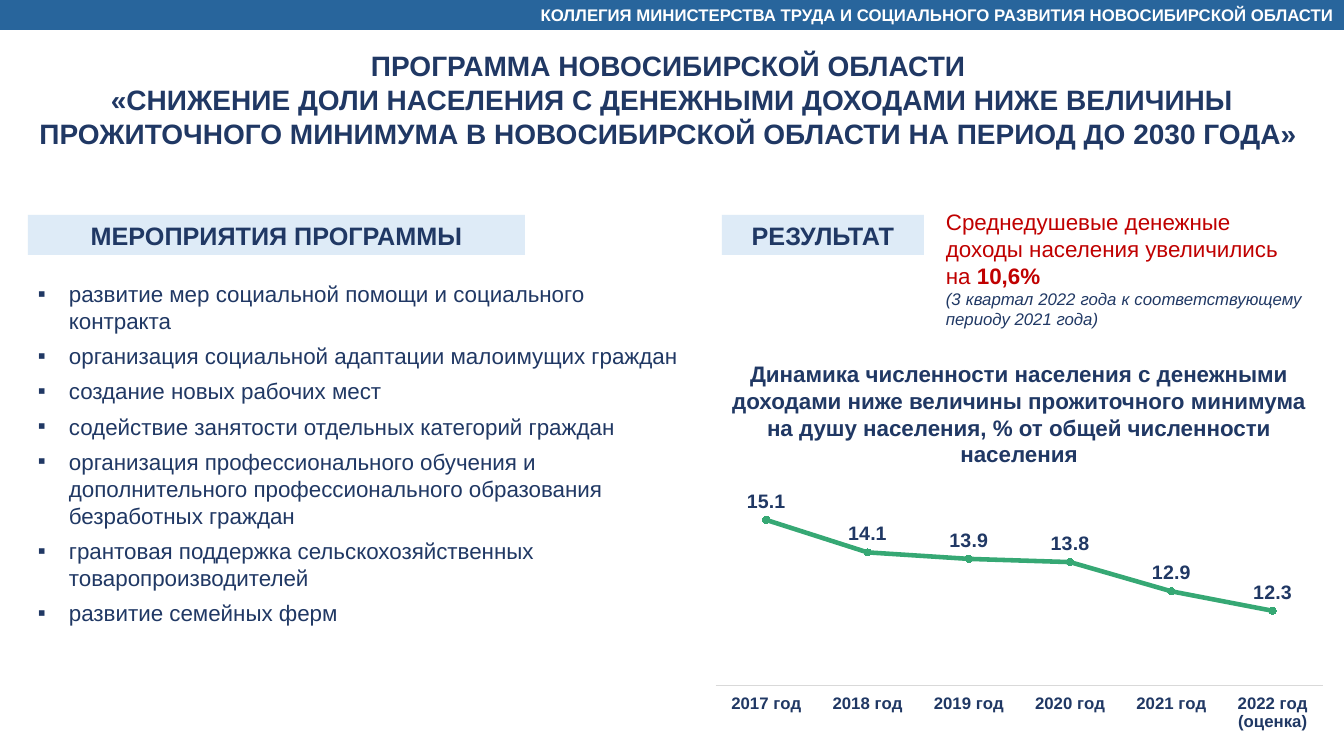
from dataclasses import dataclass, field
from typing import Any

from lxml.etree import SubElement
from pptx import Presentation
from pptx.chart.data import CategoryChartData
from pptx.dml.color import RGBColor
from pptx.enum.chart import (XL_CHART_TYPE, XL_LABEL_POSITION, XL_MARKER_STYLE,
                             XL_TICK_LABEL_POSITION, XL_TICK_MARK)
from pptx.enum.shapes import MSO_SHAPE
from pptx.enum.text import MSO_ANCHOR, MSO_AUTO_SIZE, PP_ALIGN
from pptx.oxml import parse_xml
from pptx.oxml.ns import nsdecls, qn
from pptx.util import Emu, Pt

EMU_PER_PX = 914400 / 100.8


@dataclass(frozen=True)
class Theme:
    font: str = "Arial"
    navy: str = "203864"
    red: str = "C00000"
    white: str = "FFFFFF"
    banner: str = "28659C"
    panel: str = "DEEBF7"
    trend: str = "36A874"
    axis: str = "D9D9D9"
    title: int = 20
    heading: int = 18
    body: int = 16
    value: int = 14
    small: int = 12


THEME = Theme()


@dataclass(frozen=True)
class Span:
    text: str
    size: int = THEME.body
    color: str = THEME.navy
    bold: bool = False
    italic: bool = False


@dataclass(frozen=True)
class Line:
    spans: list[Span]
    align: Any = PP_ALIGN.LEFT
    bulleted: bool = False


@dataclass(frozen=True)
class Block:
    box: tuple[int, int, int, int]
    lines: list[Line] = field(default_factory=list)
    fill: str | None = None


def px(length: int) -> Emu:
    return Emu(round(length * EMU_PER_PX))


def apply_format(target: Any, values: dict[str, Any]) -> None:
    for name, value in values.items():
        setattr(target, name, value)


def style_font(font: Any, size: int, color: str, bold: bool = False,
               italic: bool = False) -> None:
    apply_format(font, {"name": THEME.font, "size": Pt(size),
                        "bold": bold, "italic": italic})
    font.color.rgb = RGBColor.from_string(color)


def add_bullet(paragraph: Any) -> None:
    properties = paragraph._p.get_or_add_pPr()
    indent = px(31)
    properties.set("marL", str(indent))
    properties.set("indent", str(-indent))
    SubElement(properties, qn("a:buFont")).set("typeface", THEME.font)
    SubElement(properties, qn("a:buChar")).set("char", "▪")
    paragraph.space_after = Pt(6)


def draw_block(slide: Any, block: Block) -> None:
    box = [px(length) for length in block.box]
    if block.fill:
        shape = slide.shapes.add_shape(MSO_SHAPE.RECTANGLE, *box)
        shape.shadow.inherit = False
        shape.fill.solid()
        shape.fill.fore_color.rgb = RGBColor.from_string(block.fill)
        shape.line.fill.background()
    else:
        shape = slide.shapes.add_textbox(*box)
    frame = shape.text_frame
    apply_format(frame, {"word_wrap": True, "vertical_anchor": MSO_ANCHOR.TOP,
                         "auto_size": MSO_AUTO_SIZE.SHAPE_TO_FIT_TEXT})
    for index, line in enumerate(block.lines):
        paragraph = frame.add_paragraph() if index else frame.paragraphs[0]
        paragraph.alignment = line.align
        if line.bulleted:
            add_bullet(paragraph)
        for span in line.spans:
            run = paragraph.add_run()
            run.text = span.text
            style_font(run.font, span.size, span.color, span.bold, span.italic)


def place_plot(chart: Any, x: float, y: float, w: float, h: float) -> None:
    """Fix the inner plot area as fractions of the chart."""
    plot_area = chart._chartSpace.chart.plotArea
    for old in plot_area.findall(qn("c:layout")):
        plot_area.remove(old)
    fractions = "".join(f'<c:{tag} val="{value}"/>' for tag, value in
                        {"x": x, "y": y, "w": w, "h": h}.items())
    plot_area.insert(0, parse_xml(
        f'<c:layout {nsdecls("c")}><c:manualLayout><c:layoutTarget val="inner"/>'
        f'<c:xMode val="edge"/><c:yMode val="edge"/>{fractions}'
        '</c:manualLayout></c:layout>'))


def draw_poverty_chart(slide: Any, box: tuple[int, int, int, int],
                       shares: dict[str, float]) -> None:
    data = CategoryChartData(number_format="0.0")
    data.categories = list(shares)
    data.add_series("Доля населения, %", list(shares.values()))
    chart = slide.shapes.add_chart(XL_CHART_TYPE.LINE_MARKERS,
                                   *map(px, box), data).chart
    apply_format(chart, {"has_legend": False, "has_title": False})
    style_font(chart.font, THEME.small, THEME.navy, bold=True)
    place_plot(chart, 0.02, 0.02, 0.96, 0.8)

    apply_format(chart.value_axis, {
        "minimum_scale": 10, "maximum_scale": 16, "visible": False,
        "has_major_gridlines": False})
    years = chart.category_axis
    apply_format(years, {
        "major_tick_mark": XL_TICK_MARK.NONE, "minor_tick_mark": XL_TICK_MARK.NONE,
        "tick_label_position": XL_TICK_LABEL_POSITION.LOW})
    years.format.line.color.rgb = RGBColor.from_string(THEME.axis)
    years.format.line.width = Pt(0.75)
    style_font(years.tick_labels.font, THEME.small, THEME.navy, bold=True)

    plot = chart.plots[0]
    plot.vary_by_categories = False
    trend = plot.series[0]
    trend.smooth = False
    trend.format.line.color.rgb = RGBColor.from_string(THEME.trend)
    trend.format.line.width = Pt(3.25)
    apply_format(trend.marker, {"style": XL_MARKER_STYLE.CIRCLE, "size": 5})
    trend.marker.format.fill.solid()
    trend.marker.format.fill.fore_color.rgb = RGBColor.from_string(THEME.trend)
    trend.marker.format.line.fill.background()
    labels = trend.data_labels
    apply_format(labels, {
        "show_value": True, "position": XL_LABEL_POSITION.ABOVE,
        "number_format": "0.0", "number_format_is_linked": False})
    style_font(labels.font, THEME.value, THEME.navy, bold=True)


def bold_line(text: str, size: int, color: str = THEME.navy,
              align: Any = PP_ALIGN.CENTER) -> Line:
    return Line([Span(text, size, color, bold=True)], align)


MEASURES = [
    "развитие мер социальной помощи и социального контракта",
    "организация социальной адаптации малоимущих граждан",
    "создание новых рабочих мест",
    "содействие занятости отдельных категорий граждан",
    "организация профессионального обучения и дополнительного профессионального образования безработных граждан",
    "грантовая поддержка сельскохозяйственных товаропроизводителей",
    "развитие семейных ферм",
]
BLOCKS = [
    Block((0, 44, 1344, 112), [
        bold_line("ПРОГРАММА НОВОСИБИРСКОЙ ОБЛАСТИ ", THEME.title),
        bold_line("«СНИЖЕНИЕ ДОЛИ НАСЕЛЕНИЯ С ДЕНЕЖНЫМИ ДОХОДАМИ НИЖЕ ВЕЛИЧИНЫ ПРОЖИТОЧНОГО МИНИМУМА В НОВОСИБИРСКОЙ ОБЛАСТИ НА ПЕРИОД ДО 2030 ГОДА» ", THEME.title)]),
    Block((714, 355, 610, 119), [bold_line(
        "Динамика численности населения с денежными доходами ниже величины прожиточного минимума на душу населения, % от общей численности населения", THEME.body)]),
    Block((28, 215, 497, 40), [bold_line("МЕРОПРИЯТИЯ ПРОГРАММЫ", THEME.heading)], THEME.panel),
    Block((936, 203, 376, 132), [
        Line([Span("Среднедушевые денежные доходы населения увеличились на ", color=THEME.red),
              Span("10,6%", color=THEME.red, bold=True)]),
        Line([Span("(3 квартал 2022 года к соответствующему периоду 2021 года)",
                   THEME.small, italic=True)], PP_ALIGN.JUSTIFY)]),
    Block((722, 215, 202, 40), [bold_line("РЕЗУЛЬТАТ", THEME.heading)], THEME.panel),
    Block((0, 0, 1344, 30), [bold_line(
        "КОЛЛЕГИЯ МИНИСТЕРСТВА ТРУДА И СОЦИАЛЬНОГО РАЗВИТИЯ НОВОСИБИРСКОЙ ОБЛАСТИ",
        THEME.small, THEME.white, PP_ALIGN.RIGHT)], THEME.banner),
    Block((28, 275, 662, 387), [Line([Span(text)], bulleted=True) for text in MEASURES]),
]
POVERTY_SHARES = {"2017 год": 15.1, "2018 год": 14.1, "2019 год": 13.9,
                  "2020 год": 13.8, "2021 год": 12.9, "2022 год (оценка)": 12.3}


def main() -> None:
    deck = Presentation()
    apply_format(deck, {"slide_width": px(1344), "slide_height": px(756)})
    slide = deck.slides.add_slide(deck.slide_layouts[6])
    for block in BLOCKS:
        draw_block(slide, block)
    draw_poverty_chart(slide, (703, 486, 633, 245), POVERTY_SHARES)
    deck.save("out.pptx")


if __name__ == "__main__":
    main()
